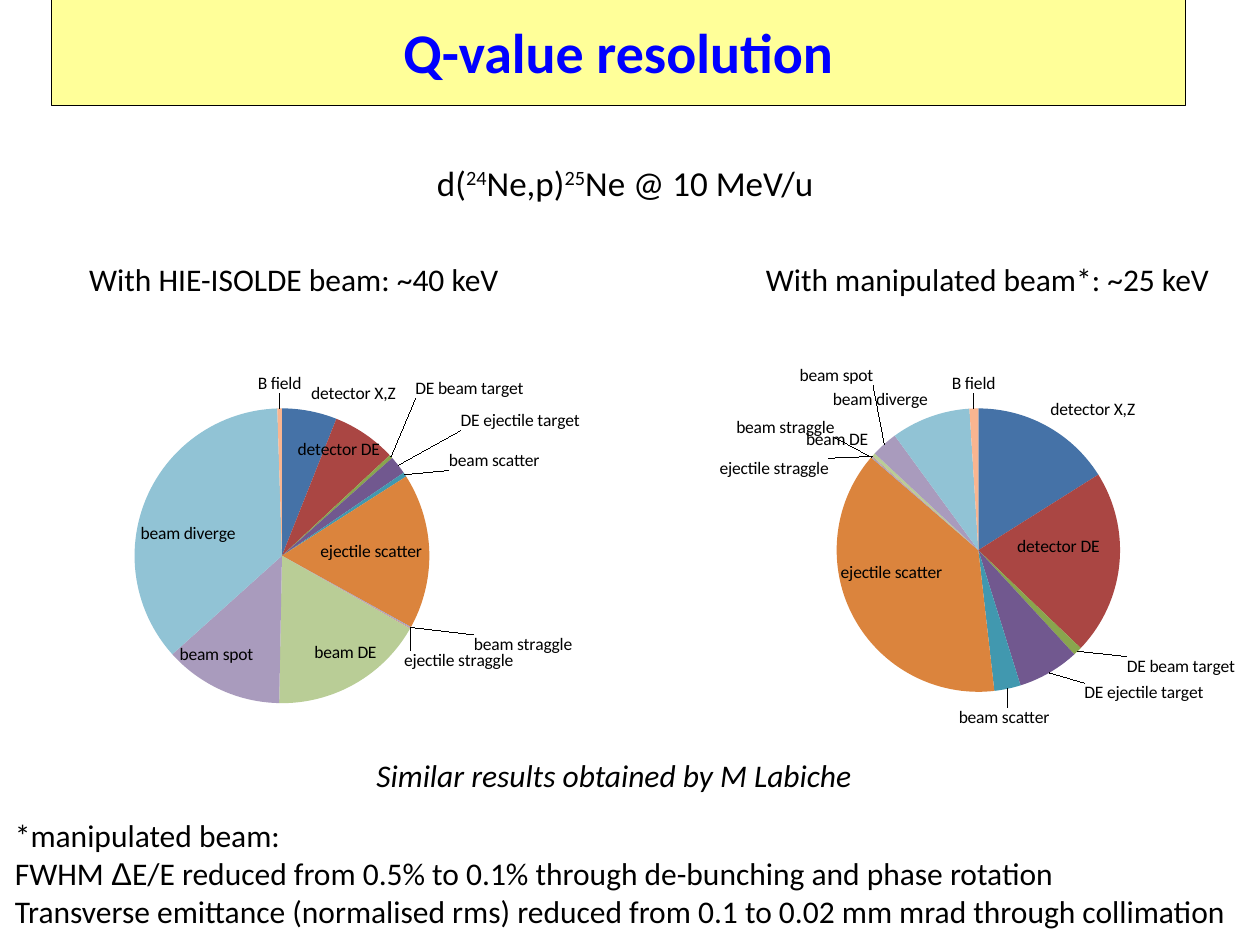
from dataclasses import dataclass

from pptx import Presentation
from pptx.chart.data import CategoryChartData
from pptx.dml.color import RGBColor
from pptx.enum.chart import XL_CHART_TYPE
from pptx.enum.text import MSO_ANCHOR, PP_ALIGN
from pptx.oxml import parse_xml
from pptx.oxml.ns import nsdecls
from pptx.util import Cm, Pt

PIE = XL_CHART_TYPE.PIE
CENTER = PP_ALIGN.CENTER
MIDDLE = MSO_ANCHOR.MIDDLE
FONT = "Calibri"
BLACK = "000000"
TITLE_ONLY = 5
CHART_W, CHART_H = 12.7, 7.62

CATEGORIES = [
    "detector X,Z", "detector DE", "DE beam target", "DE ejectile target",
    "beam scatter", "ejectile scatter", "beam straggle", "ejectile straggle",
    "beam DE", "beam spot", "beam diverge", "B field",
]
CUSTOM_LABELS = {"detector DE", "DE beam target", "DE ejectile target", "beam DE"}
SLICE_COLORS = [
    "4572A7", "AA4643", "89A54E", "71588F", "4198AF", "DB843D",
    "93A9CF", "D19392", "B9CD96", "A99BBD", "91C3D5", "F9B590",
]


@dataclass
class Run:
    text: str
    font: str = FONT
    raised: bool = False


@dataclass
class TextBox:
    left: float
    top: float
    width: float
    height: float
    paragraphs: list[list[Run]]
    size: int = 18
    italic: bool = False
    wrap: bool = True


@dataclass
class Label:
    """Label placement: inside or outside the slice, shifted by chart fractions."""
    x: float = 0
    y: float = 0
    inside: bool = False


@dataclass
class Pie:
    left: float
    plot: tuple[float, float, float, float]
    values: list[float]
    labels: list[Label]


TEXT_BOXES = [
    TextBox(8.56, 3.13, 11.48, 1.12, [[
        Run("d("), Run("24", raised=True), Run("Ne,p)"),
        Run("25", raised=True), Run("Ne @ 10 MeV/u")]], size=20),
    TextBox(1.55, 5.12, 9.17, 1.02, [[Run("With HIE-ISOLDE beam: ~40 keV")]]),
    TextBox(15.19, 5.12, 9.53, 1.02, [[Run("With manipulated beam*: ~25 keV")]]),
    TextBox(0.05, 16.33, 25.55, 2.57, [
        [Run("*manipulated beam:")],
        [Run("FWHM "), Run("Δ", font="Arial"),
         Run("E/E reduced from 0.5% to 0.1% through de-bunching and phase rotation")],
        [Run("Transverse emittance (normalised rms) reduced from 0.1 to 0.02 mm mrad "
             "through collimation")]], wrap=False),
    TextBox(7.34, 15.11, 10.26, 1.02,
            [[Run("Similar results obtained by M Labiche")]], italic=True, wrap=False),
]

# Whole percentages; slices below one percent keep one significant digit.
PIES = [
    Pie(-0.03, (0.21, 0.12, 0.48, 0.78),
        [6, 7, 0.4, 2, 0.5, 17, 0.1, 0.1, 17, 13, 36, 0.5],
        [Label(), Label(0.03, 0, True), Label(0.03, -0.14), Label(0.09, -0.08),
         Label(0.06, 0), Label(inside=True), Label(0.09, 0.01),
         Label(-0.02, 0.05), Label(0.04, -0.04, True), Label(-0.07, -0.05, True),
         Label(-0.02, 0.06, True), Label(0, -0.02)]),
    Pie(13.31, (0.28, 0.12, 0.45, 0.75),
        [16, 21, 1, 7, 3, 38, 0.1, 0.1, 0.4, 3, 9, 1],
        [Label(), Label(-0.02, -0.02, True), Label(0.07, 0), Label(0.05, 0.01),
         Label(-0.08, 0.03), Label(-0.03, -0.08, True), Label(-0.05, -0.04),
         Label(-0.06, 0.07), Label(), Label(-0.01, -0.14),
         Label(), Label(0, -0.02)]),
]


def rgb(color: str) -> RGBColor:
    return RGBColor.from_string(color)


def add_title(s, text: str) -> None:
    sp = s.shapes.title
    sp.left, sp.top, sp.width, sp.height = Cm(1.04), Cm(-0.08), Cm(22.86), Cm(2.21)
    sp.fill.solid()
    sp.fill.fore_color.rgb = rgb("FFFF99")
    sp.line.color.rgb = rgb(BLACK)
    sp.line.width = Pt(0.75)
    tf = sp.text_frame
    tf.text = text
    tf.vertical_anchor = MIDDLE
    p = tf.paragraphs[0]
    p.alignment = CENTER
    p.font.name, p.font.size, p.font.bold = FONT, Pt(32), True
    p.font.color.rgb = rgb("0000FF")


def add_text(s, box: TextBox) -> None:
    sp = s.shapes.add_textbox(Cm(box.left), Cm(box.top), Cm(box.width), Cm(box.height))
    tf = sp.text_frame
    tf.word_wrap = box.wrap
    for i, runs in enumerate(box.paragraphs):
        p = tf.add_paragraph() if i else tf.paragraphs[0]
        p.font.size, p.font.italic = Pt(box.size), box.italic
        p.font.color.rgb = rgb(BLACK)
        for run in runs:
            r = p.add_run()
            r.text = run.text
            r.font.name = run.font
            if run.raised:
                r.font._element.set("baseline", "30000")


def label_xml(index: int, label: Label):
    position = "inEnd" if label.inside else "outEnd"
    layout = text = ""
    if label.x or label.y:
        layout = (f'<c:layout><c:manualLayout><c:x val="{label.x}"/>'
                  f'<c:y val="{label.y}"/></c:manualLayout></c:layout>')
    if CATEGORIES[index] in CUSTOM_LABELS:
        text = (f'<c:tx><c:rich><a:bodyPr/><a:p><a:r><a:rPr lang="en-GB" sz="1000">'
                f'<a:solidFill><a:srgbClr val="{BLACK}"/></a:solidFill>'
                f'<a:latin typeface="{FONT}"/></a:rPr><a:t>{CATEGORIES[index]}</a:t>'
                '</a:r></a:p></c:rich></c:tx>')
    return parse_xml(
        f'<c:dLbl {nsdecls("c", "a")}><c:idx val="{index}"/>{layout}{text}'
        f'<c:dLblPos val="{position}"/><c:showLegendKey val="0"/><c:showVal val="0"/>'
        '<c:showCatName val="1"/><c:showSerName val="0"/><c:showPercent val="0"/>'
        '<c:showBubbleSize val="0"/></c:dLbl>')


def set_plot_area(chart, plot: tuple[float, float, float, float]) -> None:
    area = chart._chartSpace.chart.plotArea
    for old in area.xpath("c:layout"):
        area.remove(old)
    bounds = "".join(f'<c:{k} val="{v}"/>' for k, v in zip("xywh", plot))
    area.insert(0, parse_xml(
        f'<c:layout {nsdecls("c")}><c:manualLayout><c:layoutTarget val="inner"/>'
        f'<c:xMode val="edge"/><c:yMode val="edge"/>{bounds}'
        '</c:manualLayout></c:layout>'))


def add_pie(s, pie: Pie) -> None:
    data = CategoryChartData()
    data.categories = CATEGORIES
    data.add_series("Series 1", pie.values)
    chart = s.shapes.add_chart(PIE, Cm(pie.left), Cm(7.32), Cm(CHART_W), Cm(CHART_H),
                               data).chart
    chart.has_legend = chart.has_title = False
    chart.font.name, chart.font.size = FONT, Pt(10)
    chart.font.color.rgb = rgb(BLACK)
    set_plot_area(chart, pie.plot)
    chart.plots[0].vary_by_categories = True
    series = chart.plots[0].series[0]
    for i, color in enumerate(SLICE_COLORS):
        fill = series.points[i].format.fill
        fill.solid()
        fill.fore_color.rgb = rgb(color)
    labels = series.data_labels
    labels.show_value, labels.show_category_name = False, True
    for i, label in enumerate(pie.labels):
        labels._element.insert(i, label_xml(i, label))


def main() -> None:
    prs = Presentation()
    prs.slide_width, prs.slide_height = Cm(25.4), Cm(19.05)
    s = prs.slides.add_slide(prs.slide_layouts[TITLE_ONLY])
    add_title(s, "Q-value resolution")
    for pie in PIES:
        add_pie(s, pie)
    for box in TEXT_BOXES:
        add_text(s, box)
    prs.save("out.pptx")


if __name__ == "__main__":
    main()
